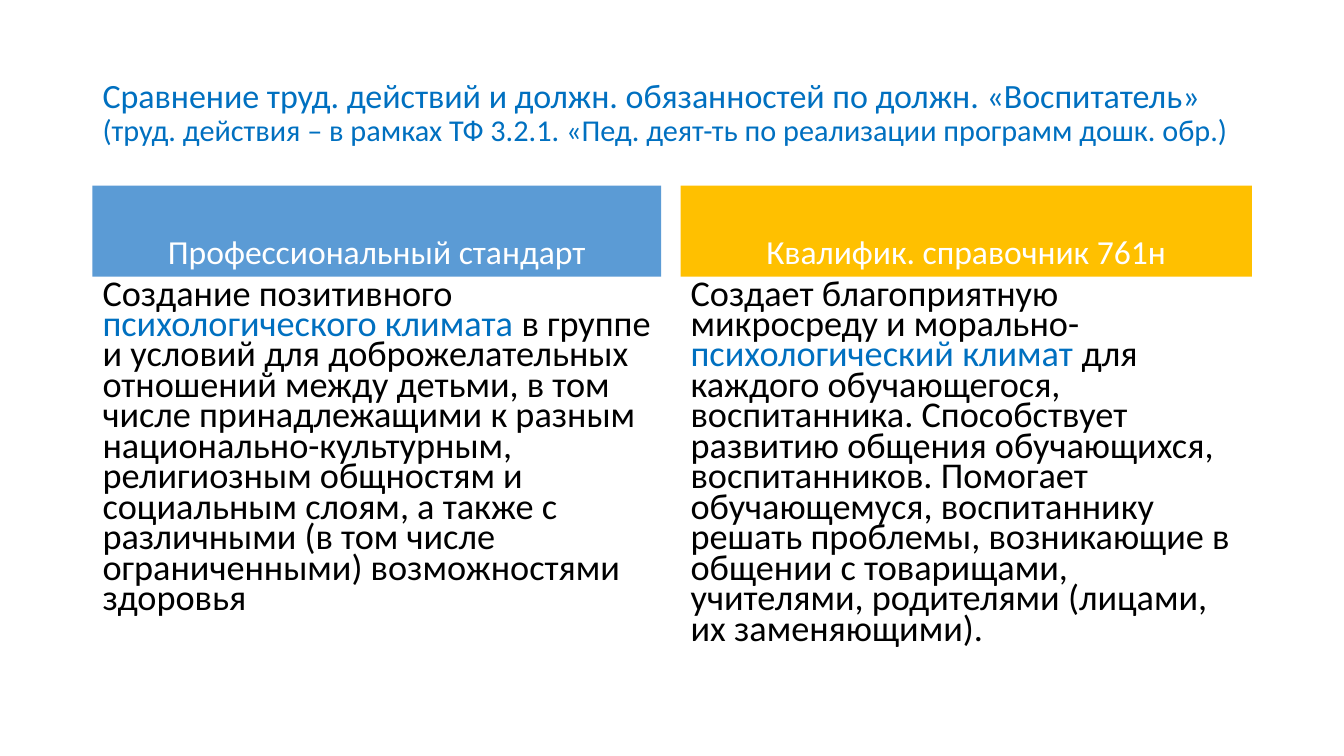
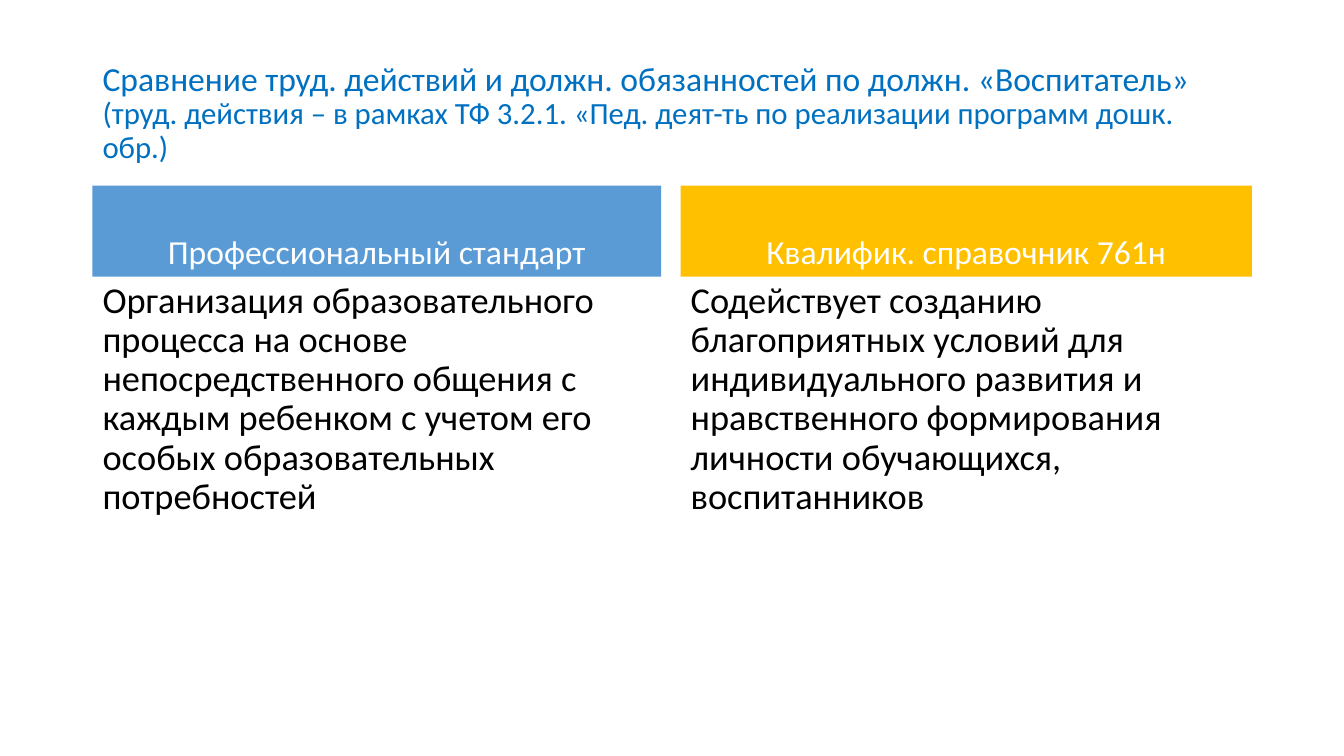
from copy import deepcopy

from lxml import etree
from pptx import Presentation
from pptx.dml.color import RGBColor
from pptx.enum.text import MSO_ANCHOR, MSO_AUTO_SIZE, PP_ALIGN
from pptx.oxml.ns import qn
from pptx.util import Cm, Pt

TOP, MIDDLE, BOTTOM = MSO_ANCHOR.TOP, MSO_ANCHOR.MIDDLE, MSO_ANCHOR.BOTTOM
LEFT, CENTER = PP_ALIGN.LEFT, PP_ALIGN.CENTER
NO_AUTOFIT = MSO_AUTO_SIZE.NONE

ACCENT = RGBColor(0x00, 0x70, 0xC0)
BLUE = RGBColor(0x5B, 0x9B, 0xD5)
GOLD = RGBColor(0xFF, 0xC0, 0x00)
BLACK = RGBColor(0x00, 0x00, 0x00)
WHITE = RGBColor(0xFF, 0xFF, 0xFF)
FONT = "Calibri"

TITLE = "Сравнение труд. действий и должн. обязанностей по должн. «Воспитатель»"
SUBTITLE = "(труд. действия – в рамках ТФ 3.2.1. «Пед. деят-ть по реализации программ дошк. обр.)"
# Heading, fill, left, width (cm), heading placeholder, body placeholder
COLUMNS = [
    ("Профессиональный стандарт", BLUE, 2.33, 14.33, 1, 2),
    ("Квалифик. справочник 761н", GOLD, 17.15, 14.4, 3, 4),
]
# Each body is a list of (text, colour) runs
SLIDES = [
    {
        "title_sizes": (24.3, 21.6), "body_size": 25.9, "body_spacing": 0.7,
        "bodies": [
            [("Создание позитивного ", BLACK),
             ("психологического климата ", ACCENT),
             ("в группе и условий для доброжелательных отношений между детьми, "
              "в том числе принадлежащими к разным национально-культурным, "
              "религиозным общностям и социальным слоям, а также с различными "
              "(в том числе ограниченными) возможностями здоровья", BLACK)],
            [("Создает благоприятную микросреду и морально-", BLACK),
             ("психологический климат ", ACCENT),
             ("для каждого обучающегося, воспитанника. Способствует развитию "
              "общения обучающихся, воспитанников. Помогает обучающемуся, "
              "воспитаннику решать проблемы, возникающие в общении с товарищами, "
              "учителями, родителями (лицами, их заменяющими).", BLACK)],
        ],
    },
    {
        "title_sizes": (24, 22), "body_size": 26, "body_spacing": 0.9,
        "bodies": [
            [("Организация образовательного процесса на основе непосредственного "
              "общения с каждым ребенком с учетом его особых образовательных "
              "потребностей", BLACK)],
            [("Содействует созданию благоприятных условий для индивидуального "
              "развития и нравственного формирования личности обучающихся, "
              "воспитанников", BLACK)],
        ],
    },
]

TITLE_BOX = (2.33, 1.02, 29.21, 3.68)
HEADING_TOP, HEADING_HEIGHT = 4.68, 2.29
BODY_TOP, BODY_HEIGHT = HEADING_TOP + HEADING_HEIGHT, 10.24
COMPARISON_LAYOUT = 4

TITLE_STYLE = {"anchor": MIDDLE, "alignment": LEFT, "line_spacing": 0.9, "space_before": Pt(0)}
HEADING_STYLE = {"anchor": BOTTOM, "alignment": CENTER, "line_spacing": 0.9, "space_before": Pt(10)}
BODY_STYLE = {"anchor": TOP, "alignment": LEFT, "space_before": Pt(0)}


def set_attributes(target, values):
    for name, value in values.items():
        setattr(target, name, value)


def prepare(shape, box, anchor, **paragraph_format):
    """Place a placeholder and return its formatted first paragraph."""
    set_attributes(shape, dict(zip(("left", "top", "width", "height"), map(Cm, box))))
    set_attributes(shape.text_frame, {
        "word_wrap": True, "auto_size": NO_AUTOFIT, "vertical_anchor": anchor})
    paragraph = shape.text_frame.paragraphs[0]
    set_attributes(paragraph, paragraph_format)
    return paragraph


def add_run(paragraph, text, size, color):
    run = paragraph.add_run()
    run.text = text
    set_attributes(run.font, {"name": FONT, "size": Pt(size), "bold": False})
    run.font.color.rgb = color
    return run


def remove_bullet(paragraph):
    properties = paragraph._p.get_or_add_pPr()
    properties.set("marL", "0")
    properties.set("indent", "0")
    etree.SubElement(properties, qn("a:buNone"))


def fill_title(shape, sizes):
    paragraph = prepare(shape, TITLE_BOX, **TITLE_STYLE)
    run = add_run(paragraph, TITLE, sizes[0], ACCENT)
    paragraph.add_line_break()
    line_break = paragraph._p.find(qn("a:br"))
    line_break.append(deepcopy(run._r.find(qn("a:rPr"))))
    add_run(paragraph, SUBTITLE, sizes[1], ACCENT)


def add_comparison(presentation, content):
    slide = presentation.slides.add_slide(presentation.slide_layouts[COMPARISON_LAYOUT])
    placeholders = slide.placeholders
    fill_title(slide.shapes.title, content["title_sizes"])
    for column, runs in zip(COLUMNS, content["bodies"]):
        heading, color, left, width, heading_index, body_index = column
        heading_shape = placeholders[heading_index]
        heading_shape.fill.solid()
        heading_shape.fill.fore_color.rgb = color
        paragraph = prepare(heading_shape, (left, HEADING_TOP, width, HEADING_HEIGHT),
                            **HEADING_STYLE)
        add_run(paragraph, heading, 24, WHITE)

        paragraph = prepare(placeholders[body_index], (left, BODY_TOP, width, BODY_HEIGHT),
                            line_spacing=content["body_spacing"], **BODY_STYLE)
        remove_bullet(paragraph)
        for text, text_color in runs:
            add_run(paragraph, text, content["body_size"], text_color)


def main():
    presentation = Presentation()
    presentation.slide_width, presentation.slide_height = Cm(33.87), Cm(19.05)
    for content in SLIDES:
        add_comparison(presentation, content)
    presentation.save("out.pptx")


if __name__ == "__main__":
    main()
